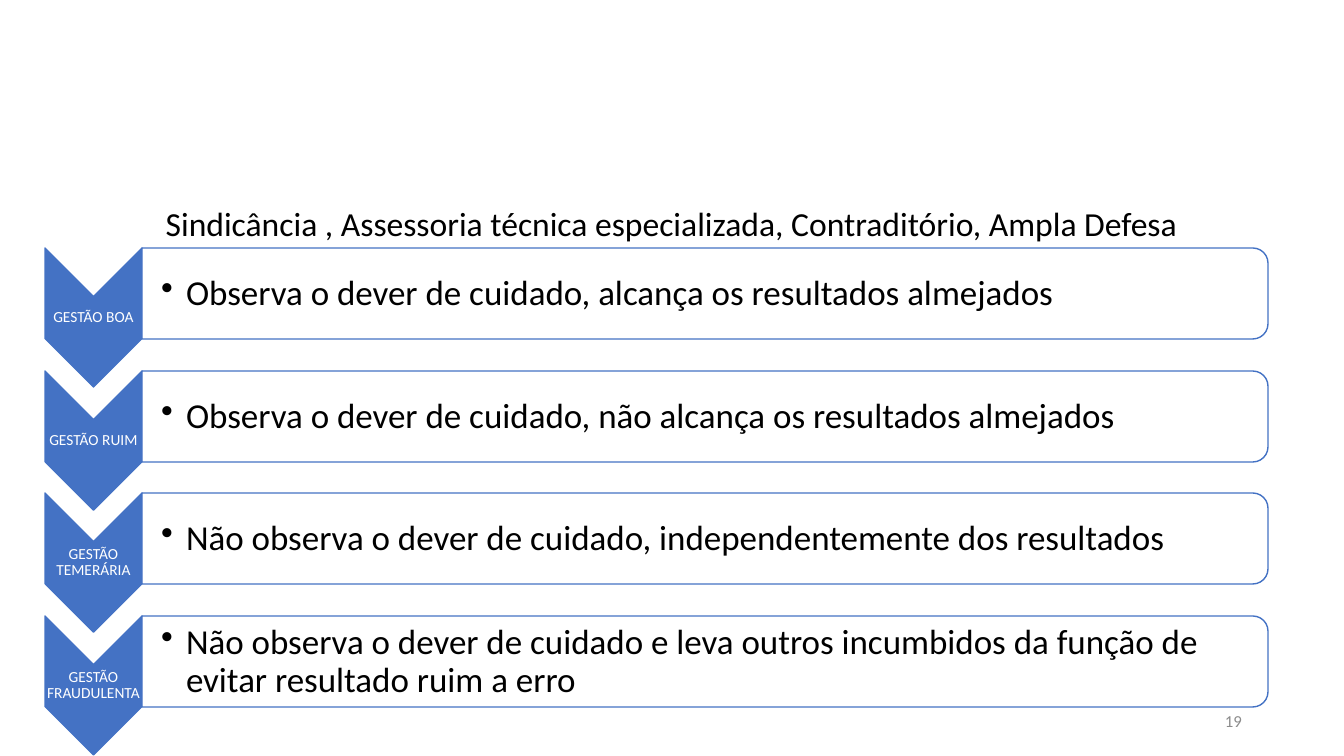
from pptx import Presentation
from pptx.util import Pt, Emu
from pptx.dml.color import RGBColor
from pptx.enum.shapes import MSO_SHAPE
from pptx.enum.text import PP_ALIGN, MSO_ANCHOR
from pptx.oxml.ns import qn
from lxml import etree

CHEVRON, ROUND = MSO_SHAPE.CHEVRON, MSO_SHAPE.ROUND_2_SAME_RECTANGLE
LEFT, CENTER, RIGHT = PP_ALIGN.LEFT, PP_ALIGN.CENTER, PP_ALIGN.RIGHT
TOP, MIDDLE = MSO_ANCHOR.TOP, MSO_ANCHOR.MIDDLE
PX = 914400 / 100.8


class Theme:
    face = "Calibri"
    blue, white = RGBColor(0x44, 0x72, 0xC4), RGBColor(255, 255, 255)
    black, gray = RGBColor(0, 0, 0), RGBColor(0x8C, 0x8C, 0x8C)
    head, item, tag, page = 24, 25, 11, 12


ROWS = [
    ("GESTÃO BOA", "Observa o dever de cuidado, alcança os resultados almejados"),
    ("GESTÃO RUIM", "Observa o dever de cuidado, não alcança os resultados almejados"),
    ("GESTÃO TEMERÁRIA",
     "Não observa o dever de cuidado, independentemente dos resultados"),
    ("GESTÃO FRAUDULENTA",
     "Não observa o dever de cuidado e leva outros incumbidos da função de "
     "evitar resultado ruim a erro"),
]


def px(n):
    return Emu(round(n * PX))


def label(slide, box, text, size, color, align=CENTER, anchor=MIDDLE,
          pads=(10, 5, 10, 5), lead=0.9, bullet=False):
    frame = slide.shapes.add_textbox(*map(px, box)).text_frame
    sides = ("margin_left", "margin_top", "margin_right", "margin_bottom")
    form = dict(zip(sides, map(px, pads)), word_wrap=True, vertical_anchor=anchor)
    for key, val in form.items():
        setattr(frame, key, val)
    para = frame.paragraphs[0]
    para.text, para.alignment, para.line_spacing = text, align, lead
    if bullet:
        props = para._p.get_or_add_pPr()
        props.set("marL", str(px(25)))
        props.set("indent", str(px(-25)))
        etree.SubElement(props, qn("a:buChar")).set("char", "•")
    for key, val in {"name": Theme.face, "size": Pt(size)}.items():
        setattr(para.font, key, val)
    para.font.color.rgb = color


def turned(slide, kind, box, fill):
    """Add a shape turned by 90 degrees that fills the box as seen."""
    x, y, w, h = box
    spot = (x + (w - h) / 2, y + (h - w) / 2, h, w)
    shape = slide.shapes.add_shape(kind, *map(px, spot))
    shape.rotation = 90
    shape.shadow.inherit = False
    shape.fill.solid()
    shape.fill.fore_color.rgb = fill
    shape.line.color.rgb = Theme.blue
    shape.line.width = Pt(1)
    return shape


def row(slide, box, tag, text):
    x, y, w, h = box
    side, bar = 97, 91
    # Chevron and its tag
    turned(slide, CHEVRON, (x, y, side, h), Theme.blue)
    label(slide, (x, y + 49, side, 41), tag, Theme.tag, Theme.white,
          pads=(1, 1, 1, 1))
    # Bar and its text
    panel = turned(slide, ROUND, (x + side, y, w - side, bar), Theme.white)
    paint = panel.fill.fore_color._xFill.find(qn("a:srgbClr"))
    etree.SubElement(paint, qn("a:alpha")).set("val", "90000")
    label(slide, (x + side, y + 5, w - side - 4, bar - 9), text, Theme.item,
          Theme.black, LEFT, pads=(19, 2, 2, 2), bullet=True)


def ladder(slide, box):
    x, y, w, h = box
    tall = 139
    step = (h - tall) / (len(ROWS) - 1)
    for i, (tag, text) in enumerate(ROWS):
        row(slide, (x, y + round(i * step), w, tall), tag, text)


def main():
    deck = Presentation()
    deck.slide_width, deck.slide_height = px(1344), px(756)
    slide = deck.slides.add_slide(deck.slide_layouts[6])
    # Heading
    label(slide, (92, 202, 1159, 480),
          "Sindicância , Assessoria técnica especializada, Contraditório, Ampla Defesa",
          Theme.head, Theme.black, anchor=TOP)
    # Page number
    label(slide, (950, 701, 302, 40), "19", Theme.page, Theme.gray, RIGHT, lead=1.0)
    # Kinds of management
    ladder(slide, (45, 248, 1223, 507))
    deck.save("out.pptx")


if __name__ == "__main__":
    main()
